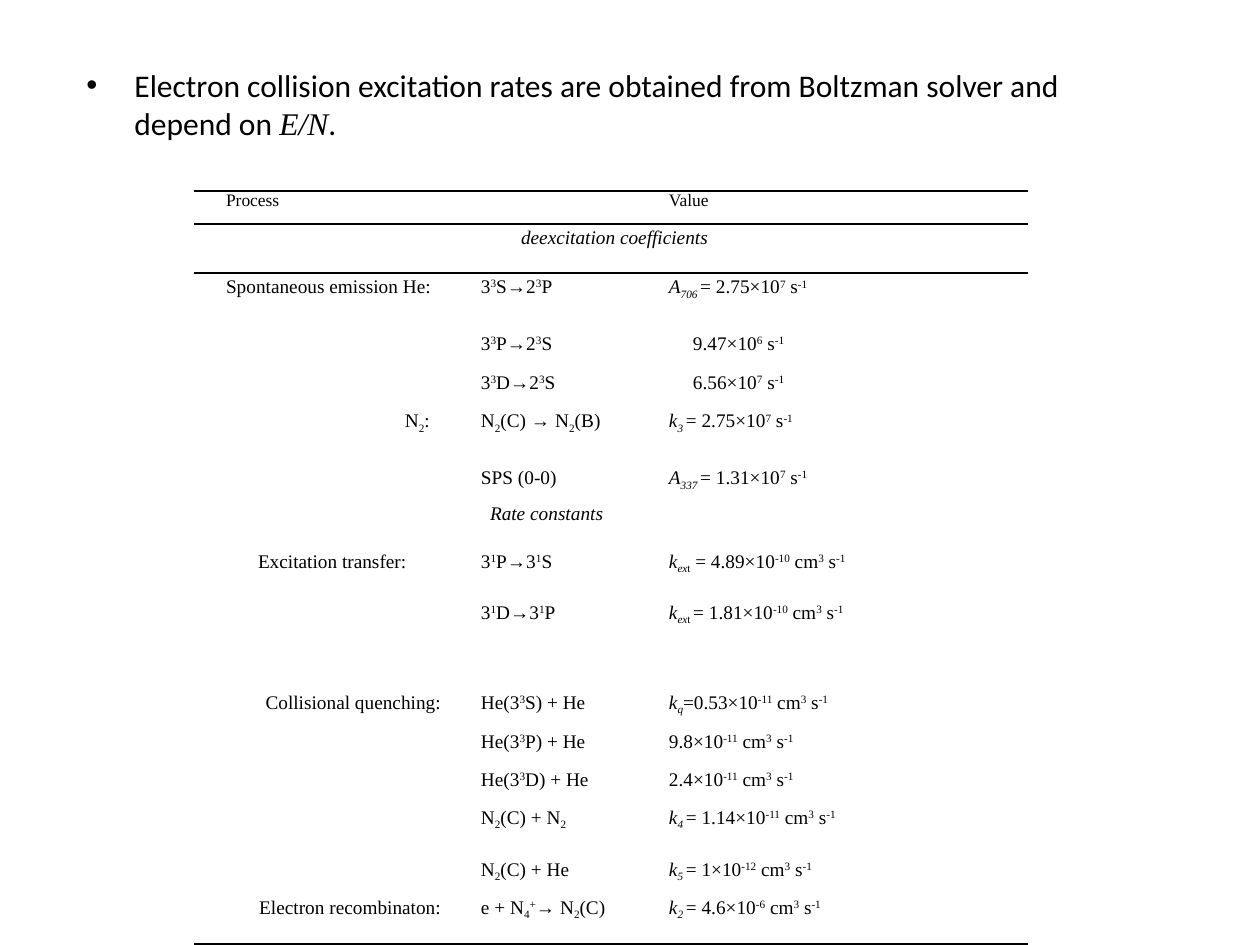
from dataclasses import dataclass

from lxml.etree import SubElement
from pptx import Presentation
from pptx.dml.color import RGBColor
from pptx.enum.text import MSO_AUTO_SIZE, PP_ALIGN
from pptx.oxml.ns import qn
from pptx.util import Emu, Pt

PX_PER_INCH = 126
BLACK = RGBColor(0x00, 0x00, 0x00)
SERIF = "Times New Roman"
SANS = "Calibri"
NO_TABLE_STYLE = "{2D5ABB26-0587-4C30-8999-92F81FD0307C}"

COLUMN_WIDTHS = (255, 188, 323, 68)
CELL_INSET = 8
INDENT = 24
BASELINES = {"^": "30000", "_": "-25000"}


def px(length: int) -> Emu:
    return Emu(round(length * 914400 / PX_PER_INCH))


@dataclass(frozen=True)
class Row:
    """A table row; in its texts, | parts the runs and a leading ^, _ or *
    makes a run superscript, subscript or italic."""
    height: int
    label: str = ""
    process: str = ""
    value: str = ""
    label_indent: int = INDENT
    value_indent: int = INDENT
    label_align: PP_ALIGN = PP_ALIGN.LEFT
    size: int = 11
    line_spacing: float = 1.0
    space_before: int = 0
    space_after: int = 0
    span: int = 1
    line_above: bool = False
    line_below: bool = False


PER_SECOND = "| s|^-1"
VOLUME_RATE = "| cm|^3| s|^-1"
LOOSE = 1.15
RIGHT = PP_ALIGN.RIGHT

ROWS = (
    Row(33, "Process", "", "Value", size=10, line_above=True, line_below=True),
    Row(49, "*deexcitation coefficients", label_indent=319, line_spacing=LOOSE,
        space_before=6, span=3, line_above=True),
    Row(57, "Spontaneous emission He:", "3|^3|S→2|^3|P",
        "*A|_*706 |= 2.75×10|^7" + PER_SECOND, line_spacing=LOOSE),
    Row(39, "", "3|^3|P→2|^3|S", "9.47×10|^6" + PER_SECOND,
        value_indent=2 * INDENT, line_spacing=LOOSE),
    Row(38, "", "3|^3|D→2|^3|S", "6.56×10|^7" + PER_SECOND,
        value_indent=2 * INDENT, line_spacing=LOOSE),
    Row(57, "N|_2|:", "N|_2|(C) → N|_2|(B)", "*k|_*3 |= 2.75×10|^7" + PER_SECOND,
        label_indent=203, line_spacing=LOOSE),
    Row(39, "", "SPS (0-0)", "*A|_*337 |= 1.31×10|^7" + PER_SECOND,
        line_spacing=LOOSE),
    Row(48, "*Rate constants", label_indent=288, space_before=6, space_after=6,
        span=3),
    Row(51, "Excitation transfer:", "3|^1|P→3|^1|S",
        "*k|_*ex|_t| = 4.89×10|^-10" + VOLUME_RATE, label_indent=56),
    Row(52, "", "3|^1|D→3|^1|P", "*k|_*ex|_t |= 1.81×10|^-10" + VOLUME_RATE),
    Row(38, span=2),
    Row(39, "Collisional quenching:", "He(3|^3|S) + He",
        "*k|_*q|=0.53×10|^-11" + VOLUME_RATE, label_align=RIGHT),
    Row(38, "", "He(3|^3|P) + He", "9.8×10|^-11" + VOLUME_RATE),
    Row(38, "", "He(3|^3|D) + He", "2.4×10|^-11" + VOLUME_RATE),
    Row(52, "", "N|_2|(C) + N|_2", "*k|_*4 |= 1.14×10|^-11" + VOLUME_RATE),
    Row(38, "", "N|_2|(C) + He", "*k|_*5 |= 1×10|^-12" + VOLUME_RATE),
    Row(47, "Electron recombinaton:", "e + N|_4|^+|→ N|_2|(C)",
        "*k|_*2 |= 4.6×10|^-6" + VOLUME_RATE, label_align=RIGHT, line_below=True),
)


def write_text(paragraph, text: str, *, size: int, font: str = SERIF,
               italic_font: str = SERIF, align: PP_ALIGN = PP_ALIGN.LEFT,
               left: int = 0, hanging: int = 0, line_spacing: float = 1.0,
               space_before: int = 0, space_after: int = 0) -> None:
    paragraph.alignment = align
    paragraph.line_spacing = line_spacing
    paragraph.space_before = Pt(space_before)
    paragraph.space_after = Pt(space_after)
    properties = paragraph._p.get_or_add_pPr()
    properties.set("marL", str(px(left)))
    properties.set("indent", str(px(-hanging)))
    for part in text.split("|") if text else ():
        content = part.lstrip("^_*")
        marks = part[:len(part) - len(content)]
        run = paragraph.add_run()
        run.text = content
        run.font.size = Pt(size)
        run.font.italic = "*" in marks
        run.font.name = italic_font if "*" in marks else font
        run.font.color.rgb = BLACK
        for mark in marks:
            if mark in BASELINES:
                run.font._element.set("baseline", BASELINES[mark])
    if not text:
        SubElement(paragraph._p, qn("a:endParaRPr"), sz=str(size * 100))


def add_border(cell, side: str) -> None:
    line = SubElement(cell._tc.get_or_add_tcPr(), qn(f"a:{side}"), w=str(Pt(1)))
    fill = SubElement(line, qn("a:solidFill"))
    SubElement(fill, qn("a:srgbClr"), val=str(BLACK))


def fill_row(table, index: int, row: Row) -> None:
    table.rows[index].height = px(row.height)
    texts = (row.label, row.process, row.value, "")
    indents = (row.label_indent, INDENT, row.value_indent, 0)
    for column, (text, indent) in enumerate(zip(texts, indents)):
        cell = table.cell(index, column)
        cell.margin_left = cell.margin_right = px(CELL_INSET)
        cell.margin_top = cell.margin_bottom = 0
        if row.line_above:
            add_border(cell, "lnT")
        if row.line_below:
            add_border(cell, "lnB")
        cell.fill.background()
        write_text(cell.text_frame.paragraphs[0], text, size=row.size, left=indent,
                   align=row.label_align if column == 0 else PP_ALIGN.LEFT,
                   line_spacing=row.line_spacing, space_before=row.space_before,
                   space_after=row.space_after)
    if row.span > 1:
        table.cell(index, 0).merge(table.cell(index, row.span - 1))


def add_rate_table(slide) -> None:
    height = sum(row.height for row in ROWS)
    table = slide.shapes.add_table(
        len(ROWS), len(COLUMN_WIDTHS), px(194), px(191),
        px(sum(COLUMN_WIDTHS)), px(height)).table
    table.first_row = table.horz_banding = False
    for style in table._tbl.iter(qn("a:tableStyleId")):
        style.text = NO_TABLE_STYLE
    for column, width in zip(table.columns, COLUMN_WIDTHS):
        column.width = px(width)
    for index, row in enumerate(ROWS):
        fill_row(table, index, row)


def add_statement(slide) -> None:
    box = slide.shapes.add_textbox(px(74), px(60), px(1101), px(89))
    frame = box.text_frame
    frame.word_wrap = True
    frame.auto_size = MSO_AUTO_SIZE.SHAPE_TO_FIT_TEXT
    paragraph = frame.paragraphs[0]
    write_text(paragraph,
               "Electron collision excitation rates are obtained from Boltzman "
               "solver and depend on |*E/N|.",
               size=18, font=SANS, left=48, hanging=48, space_before=12)
    properties = paragraph._p.get_or_add_pPr()
    SubElement(properties, qn("a:buFont"), typeface="Arial")
    SubElement(properties, qn("a:buChar"), char="•")


def main() -> None:
    presentation = Presentation()
    presentation.slide_width = px(1260)
    presentation.slide_height = px(945)
    slide = presentation.slides.add_slide(presentation.slide_layouts[6])
    add_rate_table(slide)
    add_statement(slide)
    presentation.save("out.pptx")


if __name__ == "__main__":
    main()
